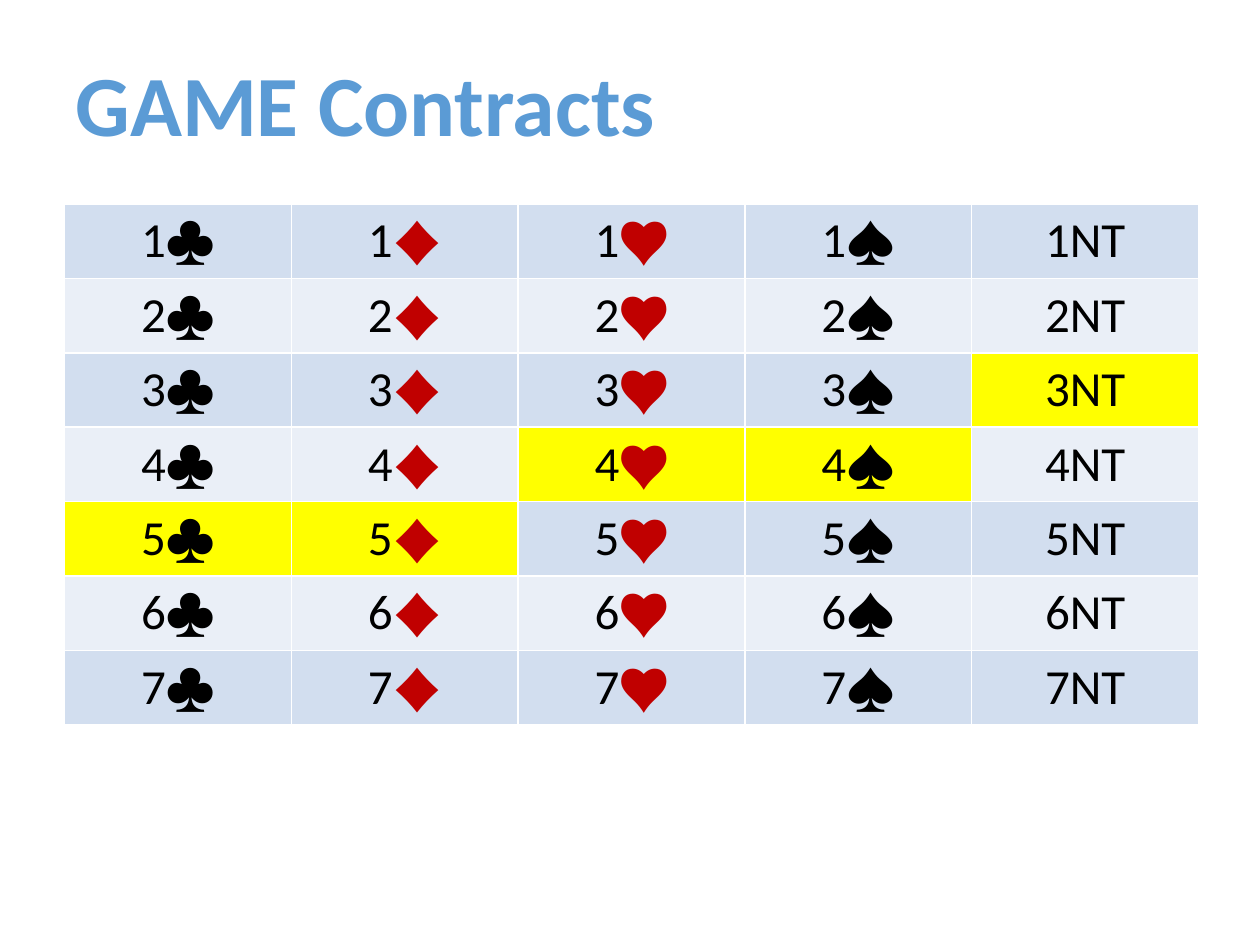
from pptx import Presentation
from pptx import util as u
from pptx.dml.color import RGBColor
from pptx.enum import text
from pptx.oxml.ns import qn
from lxml import etree

COLORS = {
    "title": "5B9BD5",
    "black": "000000",
    "red": "C00000",
    "odd": "D2DEEF",
    "even": "EAEFF7",
    "game": "FFFF00",
}
STRAINS = ["♣", "♦", "♥", "♠", "NT"]
RED_SUITS = {"♦", "♥"}
GAME_LEVELS = {"♣": 5, "♦": 5, "♥": 4, "♠": 4, "NT": 3}
LEVELS = range(1, 8)


class ContractSlide:
    font_name = "Calibri"

    def __init__(self, presentation):
        self.slide = presentation.slides.add_slide(presentation.slide_layouts[5])

    def format_run(self, run, size, color, bold=False):
        run.font.name = self.font_name
        run.font.size = u.Pt(size)
        run.font.bold = bold
        run.font.color.rgb = RGBColor.from_string(COLORS[color])

    def title(self, wording, left, top, width, height):
        shape = self.slide.shapes.title
        shape.left, shape.top = u.Cm(left), u.Cm(top)
        shape.width, shape.height = u.Cm(width), u.Cm(height)
        frame = shape.text_frame
        frame.text = wording
        frame.auto_size = text.MSO_AUTO_SIZE.NONE
        frame.vertical_anchor = text.MSO_ANCHOR.MIDDLE
        paragraph = frame.paragraphs[0]
        paragraph.alignment = text.PP_ALIGN.LEFT
        paragraph.line_spacing = 0.9
        self.format_run(paragraph.runs[0], 49, "title", bold=True)

    def fill_cell(self, cell, color):
        cell.fill.solid()
        cell.fill.fore_color.rgb = RGBColor.from_string(COLORS[color])

    def empty_cell(self, cell):
        cell.fill.background()
        paragraph = cell.text_frame.paragraphs[0]
        etree.SubElement(paragraph._p, qn("a:endParaRPr"), sz="800")

    def contract_cell(self, cell, level, strain):
        is_game = GAME_LEVELS[strain] == level
        self.fill_cell(cell, "game" if is_game else "odd" if level % 2 else "even")
        cell.vertical_anchor = text.MSO_ANCHOR.MIDDLE
        paragraph = cell.text_frame.paragraphs[0]
        paragraph.alignment = text.PP_ALIGN.CENTER
        if strain in RED_SUITS:
            parts = [(str(level), "black"), (strain, "red")]
        else:
            parts = [(f"{level}{strain}", "black")]
        for wording, color in parts:
            run = paragraph.add_run()
            run.text = wording
            self.format_run(run, 28, color)

    def contract_table(self, left, top, width, header_height, row_height):
        height = header_height + row_height * len(LEVELS)
        table = self.slide.shapes.add_table(
            len(LEVELS) + 1, len(STRAINS),
            u.Cm(left), u.Cm(top), u.Cm(width), u.Cm(height)).table
        table.rows[0].height = u.Cm(header_height)
        for level in LEVELS:
            table.rows[level].height = u.Cm(row_height)
        for column, strain in enumerate(STRAINS):
            table.columns[column].width = u.Cm(width / len(STRAINS))
            self.empty_cell(table.cell(0, column))
            for level in LEVELS:
                self.contract_cell(table.cell(level, column), level, strain)


def main():
    presentation = Presentation()
    presentation.slide_width = u.Cm(25.4)
    presentation.slide_height = u.Cm(19.05)
    slide = ContractSlide(presentation)
    slide.title("GAME Contracts", 1.27, 1.12, 22.86, 2.16)
    slide.contract_table(1.3, 3.51, 22.86, 0.6, 1.5)
    presentation.save("out.pptx")


if __name__ == "__main__":
    main()
